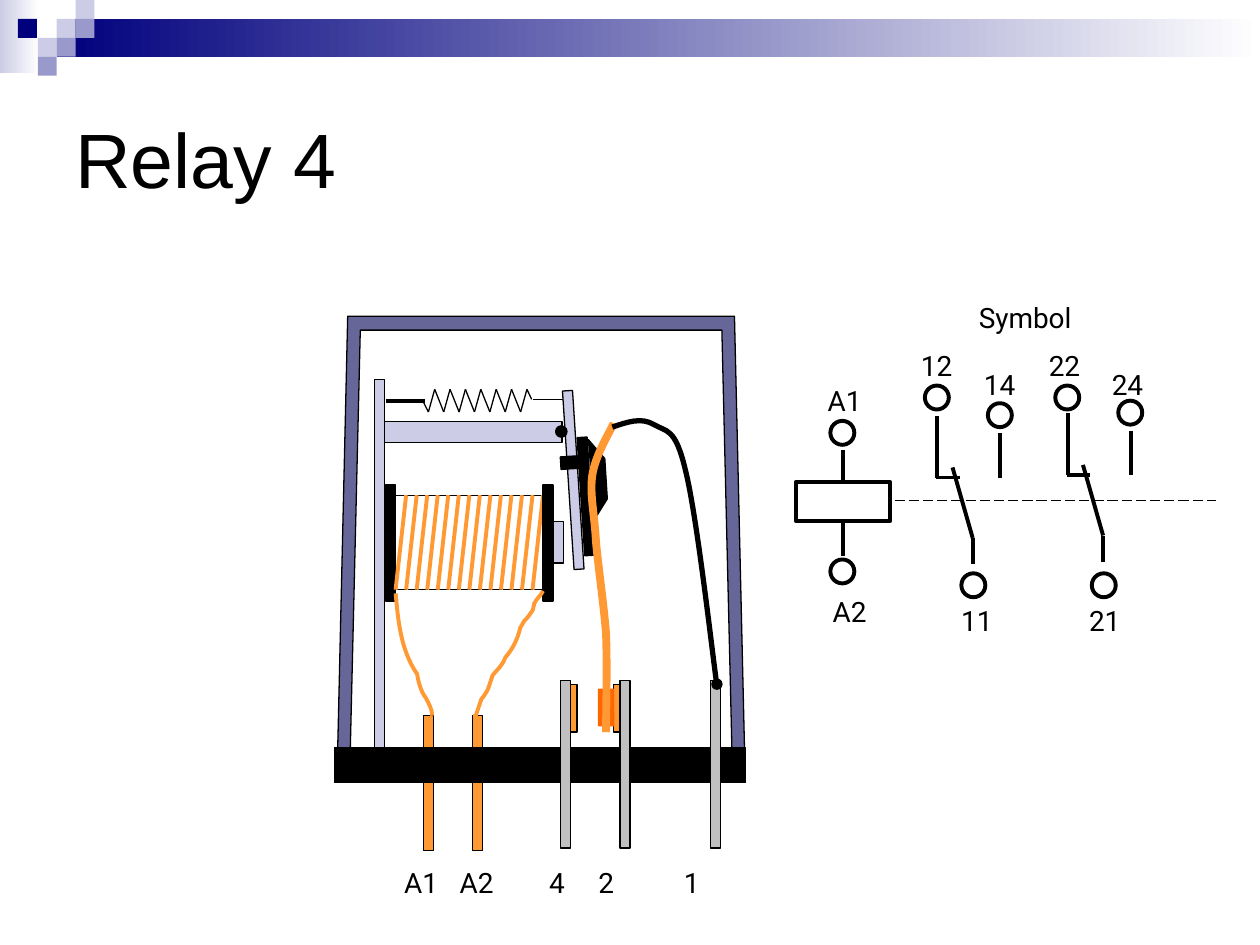
from itertools import pairwise

from lxml import etree
from pptx import Presentation
from pptx import util as u
from pptx.dml.color import RGBColor
from pptx.enum import dml, shapes, text
from pptx.oxml.ns import qn

CELL = 0.1  # inches: the slide is a grid of 100 columns by 75 rows
BLACK, WHITE, GREY = "000000", "FFFFFF", "C0C0C0"
NAVY, STEEL, LILAC, VIOLET = "00007D", "666699", "CCCCE6", "9999CC"
COPPER, ORANGE = "FF9933", "FF6600"
RECTANGLE, OVAL = shapes.MSO_SHAPE.RECTANGLE, shapes.MSO_SHAPE.OVAL
TILT = 356.3


def color(value):
    return RGBColor.from_string(value)


def cells(count):
    return u.Inches(count * CELL)


class Region:
    """Draws parts at columns and rows counted from the region's corner."""

    def __init__(self, slide, column, row):
        self.slide, self.column, self.row = slide, column, row

    def spot(self, x, y):
        return cells(self.column + x), cells(self.row + y)

    def paint(self, shape, fill, line, weight):
        shape.shadow.inherit = False
        if fill:
            shape.fill.solid()
            shape.fill.fore_color.rgb = color(fill)
        else:
            shape.fill.background()
        if line:
            shape.line.color.rgb = color(line)
            shape.line.width = u.Pt(weight)
        else:
            shape.line.fill.background()
        return shape

    def block(self, x, y, width, height, fill=None, line=BLACK, weight=0.75,
              kind=RECTANGLE, turn=0):
        shape = self.slide.shapes.add_shape(
            kind, *self.spot(x, y), cells(width), cells(height))
        shape.rotation = turn
        return self.paint(shape, fill, line, weight)

    def circle(self, x, y, size, fill=None, weight=0.75):
        return self.block(x, y, size, size, fill, weight=weight, kind=OVAL)

    def line(self, start, end, weight=0.75, line=BLACK, dash=None):
        connector = self.slide.shapes.add_connector(
            shapes.MSO_CONNECTOR.STRAIGHT, *self.spot(*start), *self.spot(*end))
        connector.line.color.rgb = color(line)
        connector.line.width = u.Pt(weight)
        if dash:
            connector.line.dash_style = dash
        etree.SubElement(connector._element.spPr, qn("a:effectLst"))

    def outline(self, points, fill=None, line=BLACK, weight=0.75):
        spots = [self.spot(*point) for point in points]
        builder = self.slide.shapes.build_freeform(*spots[0], scale=1.0)
        builder.add_line_segments(spots[1:], close=bool(fill))
        return self.paint(builder.convert_to_shape(), fill, line, weight)

    def curve(self, points, line, weight):
        """Draws joined cubic curves: a start, then three points for each."""
        shape = self.outline(points, line=line, weight=weight)
        segments = list(shape._element.iter(qn("a:lnTo")))
        for first in range(0, len(segments), 3):
            cubic = etree.Element(qn("a:cubicBezTo"))
            segments[first].addprevious(cubic)
            for segment in segments[first:first + 3]:
                cubic.append(segment[0])
                segment.getparent().remove(segment)

    def label(self, x, y, words, width=5.4, height=3.7, size=16, font="Roboto", tabs=()):
        box = self.slide.shapes.add_textbox(*self.spot(x, y), cells(width), cells(height))
        box.text_frame.word_wrap = True
        box.text_frame.vertical_anchor = text.MSO_ANCHOR.MIDDLE
        paragraph = box.text_frame.paragraphs[0]
        paragraph.text = words
        if tabs:
            stops = etree.SubElement(paragraph._p.get_or_add_pPr(), qn("a:tabLst"))
            for stop in tabs:
                etree.SubElement(stops, qn("a:tab"), pos=str(cells(stop)), algn="l")
        paragraph.font.name, paragraph.font.size = font, u.Pt(size)
        paragraph.font.color.rgb = color(BLACK)


def draw_banner(region):
    # Fading bars
    for box, start in (((0, 0, 3.1, 5.8), LILAC), ((4.5, 1.5, 95.5, 3), NAVY)):
        fill = region.block(*box, WHITE, line=None).fill
        fill.gradient()
        fill.gradient_angle = 0
        for stop, shade in zip(fill.gradient_stops, (start, WHITE)):
            stop.color.rgb = color(shade)
    # Checker squares
    for column, row, shade in ((3, 1, LILAC), (4, 0, LILAC), (4, 1, VIOLET), (2, 2, LILAC),
                               (0.95, 1, NAVY), (3, 2, VIOLET), (2, 3, VIOLET)):
        region.block(column * 1.5, row * 1.5, 1.5, 1.5, shade, line=None)


def draw_coil(region):
    for x in (11, 7.1):
        region.block(x, 31.7, 0.8, 10.7, COPPER)
    region.block(4.9, 14.2, 11.7, 7.5)
    region.block(4.1, 13.4, 0.8, 9.2, BLACK)
    turns = 14
    pitch = 11.7 / turns
    for turn in range(turns):
        left = 4.9 + turn * pitch
        region.line((left, 21.7), (left + pitch, 14.2), 2.25, COPPER)
    region.block(16.6, 13.4, 0.8, 9.2, BLACK)
    region.block(17.4, 16.3, 0.8, 3.3, LILAC)


def draw_spring(region):
    region.line((4.1, 6.7), (7.2, 6.7), 2.25)
    region.line((18.3, 6.6), (15.8, 6.6))
    zigzag = [(7.1, 6.8)]
    for coil in range(7):
        zigzag += [(7.5 + 1.22 * coil, 7.6), (8 + 1.22 * coil, 5.8)]
    for start, end in pairwise(zigzag + [(15.7, 6.6)]):
        region.line(start, end)


def draw_relay(region):
    # Housing
    region.outline([(0.3, 34.6), (1.1, 0), (31.8, 0), (32.6, 34.6)], STEEL)
    region.outline([(1.3, 34.6), (2.1, 1.1), (30.8, 1.1), (31.6, 34.6)], WHITE)
    draw_coil(region)
    # Yoke, spring and base
    region.block(3.7, 8.35, 14.4, 1.7, LILAC)
    region.block(3.2, 5, 0.8, 29.7, LILAC)
    draw_spring(region)
    region.block(0.05, 34.2, 32.6, 2.8, BLACK)
    # Coil wire to A1
    region.curve([(4.9, 22), (5.1, 24.2), (5.3, 26.5), (6.6, 28.4), (6.7, 29), (6.9, 29.8),
                  (7.3, 30.3), (7.5, 30.7), (7.8, 31.2), (7.8, 31.7)], COPPER, 2.25)
    # Fixed contacts and terminals
    for contact, terminal in ((18.5, 18), (22.2, 22.7)):
        region.block(contact, 29.2, 0.8, 3.8, COPPER)
        region.block(terminal, 28.9, 0.8, 13.3, GREY)
    region.block(29.9, 28.9, 0.8, 13.3, GREY)
    # Armature
    region.block(18.6, 5.9, 0.8, 14.2, LILAC, turn=TILT)
    region.block(18, 11.1, 2.1, 1, BLACK, turn=TILT)
    region.block(19.6, 9.6, 0.8, 9.4, BLACK, turn=TILT)
    region.outline([(20.7, 16.1), (21.7, 14.5), (21.5, 11.3), (20.2, 9.8)], BLACK)
    # Moving contact on its leaf
    region.block(21, 29.6, 1.2, 2.9, ORANGE, ORANGE, turn=359.7)
    region.curve([(21.6, 33), (21.6, 31.7), (21.7, 27.7), (21.6, 25.2), (21.4, 22.7),
                  (21, 20), (20.8, 17.9), (20.7, 15.8), (20.3, 14.2), (20.5, 12.7),
                  (20.7, 11.1), (21.9, 9.2), (22.2, 8.5)], COPPER, 4.5)
    region.circle(17.6, 8.7, 0.9, BLACK)
    # Coil wire to A2
    region.curve([(16.6, 21.8), (16.4, 22.2), (16.1, 22.4), (15.9, 22.8), (15.9, 23),
                  (15.9, 23.1), (15.8, 23.3), (15.6, 23.6), (15.4, 23.9), (15.1, 24.2),
                  (15, 24.4), (14.8, 24.7), (14.8, 24.7), (14.6, 25.6), (14.2, 26.4),
                  (13.6, 27.1), (13.4, 27.7), (13, 28), (12.6, 28.5), (12.5, 28.8),
                  (12.4, 29.1), (12.3, 29.4), (12.2, 29.8), (11.7, 30.4), (11.7, 30.4),
                  (11.6, 30.7), (11.5, 31), (11.4, 31.3), (11.2, 31.9), (11.2, 31.9),
                  (11.2, 31.6)], COPPER, 2.25)
    # Lead to terminal 1
    region.curve([(22.1, 8.8), (23.3, 8.4), (24.4, 8), (25.4, 8.6), (26.4, 9.2),
                  (27.1, 8.8), (27.9, 12.2), (28.8, 15.7), (30, 26.4), (30.4, 29.3)], BLACK, 3)
    region.circle(30, 28.8, 0.8, BLACK)
    region.label(4.6, 43.1, "A1\tA2\t4\t2\t1", width=40.9, tabs=(4.4, 11.5, 15.4, 22.2))


def draw_coil_symbol(region):
    # One stem runs behind the coil from terminal to terminal
    region.line((3.8, 12.4), (3.8, 20.8), 2.25)
    region.block(0.05, 14.95, 7.5, 3.1, WHITE, weight=2.25)
    region.line((7.9, 16.4), (33.4, 16.4), dash=dml.MSO_LINE.LONG_DASH)
    for y in (10.1, 21.1):
        region.circle(2.8, y, 1.9, weight=2.25)
    region.label(1.6, 6.6, "A1")
    region.label(2, 23.4, "A2", width=4.9)
    region.label(13.6, 0, "Symbol", width=16)


def draw_changeover(region, names, lift=0, label_shift=0):
    # Closed lead, its stop, open lead, common lead, blade
    for x1, y1, x2, y2 in ((1, 5.9, 1, 10.8), (0.9, 10.8, 2.8, 10.8), (6, 7.3, 6, 10.8),
                           (3.8, 15.6, 3.8, 17.7), (3.8, 15.6, 2.2, 10)):
        region.line((x1, y1 - lift), (x2, y2 - lift), 2.25)
    for x, y in ((0, 3.5), (5, 4.9 - lift), (2.9, 18.4)):
        region.circle(x, y, 1.9, weight=2.25)
    for name, x, y in zip(names, (-1.3, 3.7, 1.9), (0.05, 1.55, 20.3)):
        region.label(x + label_shift, y, name, width=5.1)


def main():
    presentation = Presentation()
    presentation.slide_width, presentation.slide_height = cells(100), cells(75)
    slide = presentation.slides.add_slide(presentation.slide_layouts[6])
    page = Region(slide, 0, 0)
    draw_banner(page)
    page.label(5, 5, "Relay 4", width=90, height=15, size=44, font="Arial")
    draw_relay(Region(slide, 26.5, 25.1))
    draw_coil_symbol(Region(slide, 63.1, 23.3))
    draw_changeover(Region(slide, 73.4, 27.1), ("12", "14", "11"))
    draw_changeover(Region(slide, 83.75, 27.1), ("22", "24", "21"), 0.2, -0.2)
    presentation.save("out.pptx")


if __name__ == "__main__":
    main()
